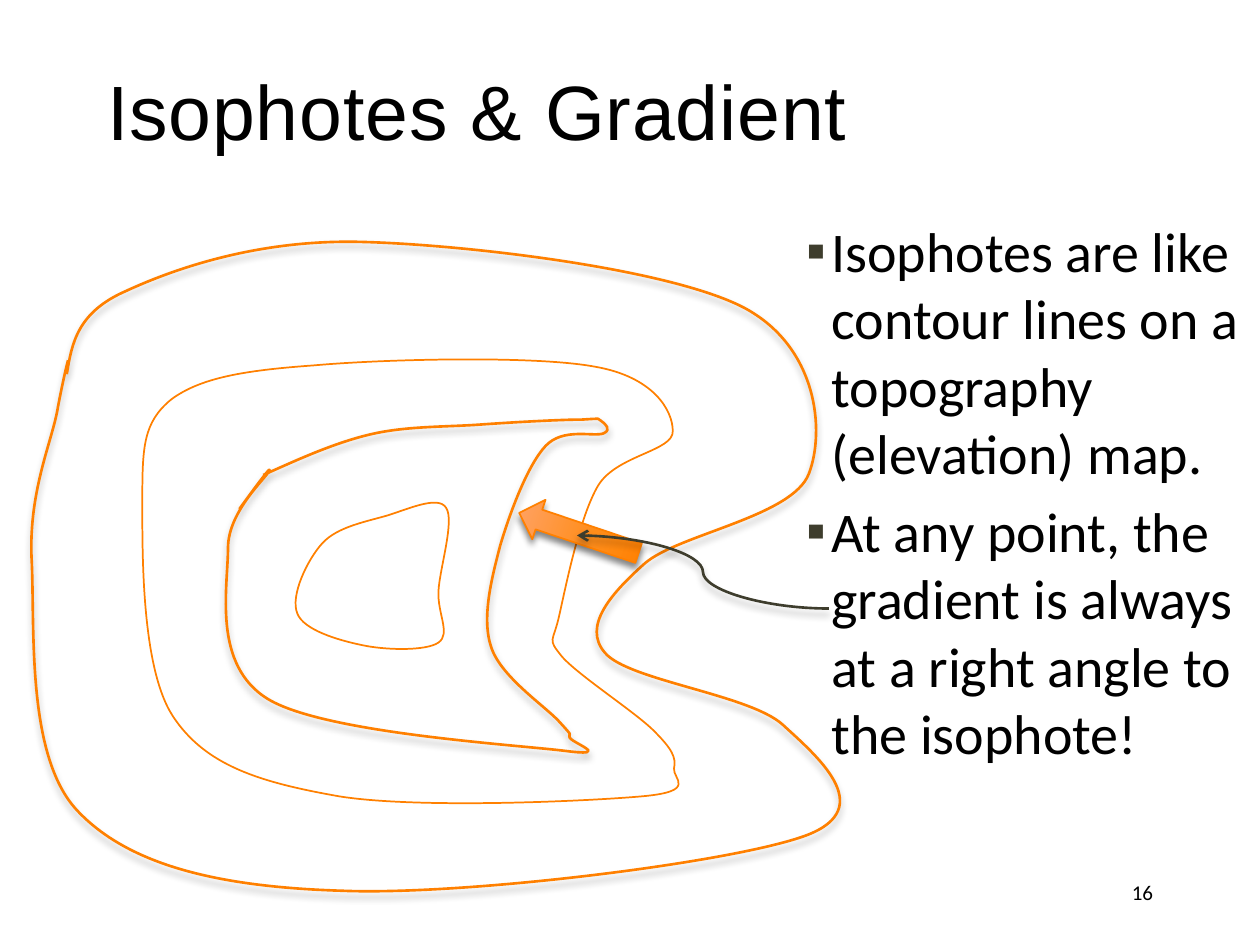
import dataclasses

import pptx
import pptx.dml.color
import pptx.enum.shapes
import pptx.enum.text
import pptx.oxml
import pptx.oxml.ns
import pptx.util

PX = 9144  # EMU per px, 100 px to the inch


@dataclasses.dataclass(frozen=True)
class Theme:
    ink: str = "000000"
    dark: str = "3E3D2D"
    orange: str = "FF8000"
    gradient: tuple = ((0, "FFA46B"), (60, "FF8D1A"), (100, "FF8000"))
    title_font: str = "Arial"
    body_font: str = "Calibri"
    bullet_font: str = "Arial"
    title_size: int = 44
    body_size: int = 32
    number_size: int = 12
    thin: float = 1
    thick: float = 1.5


# Each contour: a start point, then two handles and an end point per curve.
OUTER = [
    (53, 297), (57, 273), (61, 248), (100, 231), (139, 213), (205, 190), (286, 192),
    (368, 194), (530, 213), (590, 244), (649, 275), (655, 342), (642, 376),
    (629, 410), (539, 424), (512, 447), (485, 471), (462, 497), (480, 518),
    (498, 540), (594, 551), (621, 575), (647, 599), (698, 641), (640, 663),
    (581, 685), (367, 711), (271, 707), (174, 704), (102, 687), (61, 643),
    (20, 599), (28, 495), (25, 442), (23, 388), (42, 349), (46, 323),
    (51, 297), (54, 286), (54, 286),
]
MIDDLE = [
    (136, 317), (159, 300), (193, 294), (249, 290), (304, 285), (424, 282), (472, 291),
    (519, 299), (534, 326), (534, 342), (535, 358), (490, 361), (475, 385),
    (460, 410), (449, 466), (444, 488), (439, 511), (434, 506), (446, 521),
    (459, 536), (504, 565), (519, 580), (533, 594), (537, 601), (535, 610),
    (534, 618), (554, 628), (510, 632), (465, 636), (331, 642), (269, 632),
    (207, 621), (163, 608), (137, 568), (112, 529), (113, 438), (113, 396),
    (113, 354), (114, 335), (136, 317),
]
INNER = [
    (209, 377), (236, 365), (264, 352), (293, 345), (322, 338), (353, 339), (381, 337),
    (409, 335), (446, 333), (462, 333), (478, 332), (475, 332), (477, 334),
    (480, 336), (486, 341), (479, 344), (471, 347), (447, 339), (433, 354),
    (419, 369), (405, 406), (397, 433), (390, 460), (382, 491), (390, 514),
    (398, 538), (435, 562), (445, 574), (456, 586), (451, 581), (452, 585),
    (452, 589), (488, 601), (449, 596), (409, 591), (258, 582), (213, 555),
    (168, 528), (181, 466), (181, 435), (181, 405), (213, 378), (214, 373),
    (216, 368), (190, 404), (190, 404),
]
CORE = [
    (256, 431), (268, 418), (291, 414), (308, 409), (324, 404), (348, 393), (354, 403),
    (361, 413), (349, 451), (348, 469), (347, 487), (358, 503), (348, 510),
    (338, 517), (305, 516), (287, 512), (268, 508), (241, 500), (236, 487),
    (230, 473), (244, 444), (256, 431),
]


def color(value):
    return pptx.dml.color.RGBColor.from_string(value)


def xml(tag, attributes="", inner=""):
    namespace = pptx.oxml.ns.nsdecls("a")
    return pptx.oxml.parse_xml(f"<a:{tag} {namespace} {attributes}>{inner}</a:{tag}>")


def write(para, text, *, font, size, ink, align="LEFT", spacing=0):
    para.alignment = getattr(pptx.enum.text.PP_ALIGN, align)
    span = para.add_run()
    span.text = text
    span.font.name = font
    span.font.size = pptx.util.Pt(size)
    span.font.color.rgb = color(ink)
    if spacing:
        span.font._element.set("spc", str(round(spacing * 100)))


class SlideMaker:
    def __init__(self, page, theme):
        self.page = page
        self.theme = theme

    def title(self, text, left, top, width, height):
        box = self.page.shapes.title
        box.left, box.top, box.width, box.height = (n * PX for n in (left, top, width, height))
        box.text_frame.vertical_anchor = pptx.enum.text.MSO_ANCHOR.MIDDLE
        write(box.text_frame.paragraphs[0], text, font=self.theme.title_font,
              size=self.theme.title_size, ink=self.theme.ink, spacing=0.5)

    def text(self, lines, left, top, width, height, *, size, align="LEFT",
             anchor="TOP", bullets=False):
        box = self.page.shapes.add_textbox(*(n * PX for n in (left, top, width, height)))
        frame = box.text_frame
        frame.word_wrap = True
        frame.vertical_anchor = getattr(pptx.enum.text.MSO_ANCHOR, anchor)
        for index, line in enumerate(lines):
            para = frame.add_paragraph() if index else frame.paragraphs[0]
            if index:
                para.space_before = pptx.util.Pt(size * 0.2)
            if bullets:
                self.bullet(para)
            write(para, line, font=self.theme.body_font, size=size,
                  ink=self.theme.ink, align=align)

    def bullet(self, para):
        properties = para._p.get_or_add_pPr()
        properties.set("marL", str(25 * PX))
        properties.set("indent", str(-20 * PX))
        properties.append(xml("buClr", inner=f'<a:srgbClr val="{self.theme.dark}"/>'))
        properties.append(xml("buFont", f'typeface="{self.theme.bullet_font}"'))
        properties.append(xml("buChar", 'char="▪"'))

    def outline(self, shape, ink, weight):
        shape.line.color.rgb = color(ink)
        shape.line.width = pptx.util.Pt(weight)

    def shadow(self, shape, *, blur=4, alpha=28):
        shade = (f'<a:outerShdw blurRad="{round(blur * 12700)}" dist="38100" dir="5400000" '
                 f'rotWithShape="0"><a:srgbClr val="000000"><a:alpha val="{alpha * 1000}"/>'
                 '</a:srgbClr></a:outerShdw>')
        shape._element.spPr.append(xml("effectLst", inner=shade))

    def contour(self, points, left, top, width, height, *, weight, shadow=False):
        """Draw cubic curves through points, in a freeform with the given bounds."""
        builder = self.page.shapes.build_freeform(left, top, scale=PX)
        builder.add_line_segments([(left + width, top + height)], close=False)
        shape = builder.convert_to_shape()
        track = shape._element.spPr.find(".//" + pptx.oxml.ns.qn("a:path"))
        for step in list(track):
            track.remove(step)
        places = [f'<a:pt x="{x - left}" y="{y - top}"/>' for x, y in points]
        track.append(xml("moveTo", inner=places[0]))
        for first in range(1, len(places), 3):
            track.append(xml("cubicBezTo", inner="".join(places[first:first + 3])))
        if points[0] == points[-1]:
            track.append(xml("close"))
        shape.fill.background()
        self.outline(shape, self.theme.orange, weight)
        if shadow:
            self.shadow(shape)
        else:
            shape.shadow.inherit = False

    def gradient_arrow(self, left, top, width, height, *, rotation):
        shape = self.page.shapes.add_shape(
            pptx.enum.shapes.MSO_SHAPE.UP_ARROW, *(n * PX for n in (left, top, width, height)))
        shape.rotation = rotation
        stops = "".join(f'<a:gs pos="{place * 1000}"><a:srgbClr val="{ink}"/></a:gs>'
                        for place, ink in self.theme.gradient)
        shape._element.spPr.append(xml(
            "gradFill", 'rotWithShape="1"',
            f'<a:gsLst>{stops}</a:gsLst><a:lin ang="5400000" scaled="0"/>'))
        self.outline(shape, self.theme.orange, self.theme.thin)
        self.shadow(shape, blur=3.8, alpha=48)

    def curved_pointer(self, *ends):
        line = self.page.shapes.add_connector(
            pptx.enum.shapes.MSO_CONNECTOR.CURVE, *(n * PX for n in ends))
        self.outline(line, self.theme.dark, self.theme.thick)
        line.line._get_or_add_ln().append(xml("tailEnd", 'type="arrow"'))
        self.shadow(line)


def main():
    deck = pptx.Presentation()
    deck.slide_width, deck.slide_height = 1000 * PX, 750 * PX
    theme = Theme()
    maker = SlideMaker(deck.slides.add_slide(deck.slide_layouts[5]), theme)

    maker.title("Isophotes & Gradient", 75, 25, 850, 124)
    maker.text(["Isophotes are like contour lines on a topography (elevation) map.",
                "At any point, the gradient is always at a right angle to the isophote!"],
               625, 167, 375, 500, size=theme.body_size, bullets=True)
    maker.text(["16"], 717, 683, 208, 50, size=theme.number_size,
               align="RIGHT", anchor="MIDDLE")

    maker.contour(OUTER, 25, 192, 642, 516, weight=theme.thick, shadow=True)
    maker.contour(MIDDLE, 113, 285, 426, 352, weight=theme.thin)
    maker.contour(INNER, 179, 333, 303, 265, weight=theme.thick, shadow=True)
    maker.gradient_arrow(443, 373, 33, 100, rotation=288.6)
    maker.contour(CORE, 234, 399, 122, 116, weight=theme.thin)
    maker.curved_pointer(658, 483, 458, 425)
    deck.save("out.pptx")


if __name__ == "__main__":
    main()
